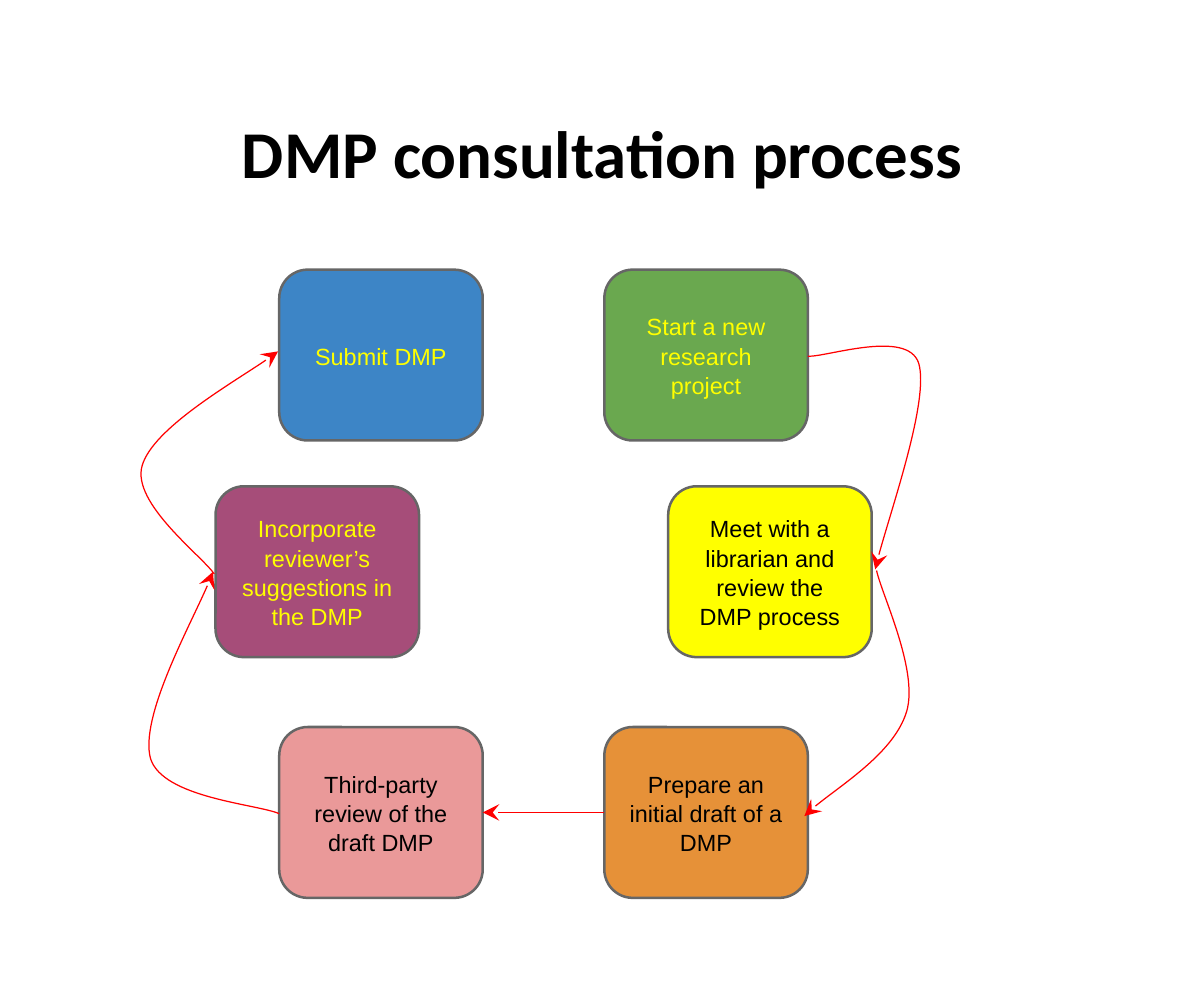
from lxml.etree import SubElement
from pptx import Presentation
from pptx.dml.color import RGBColor
from pptx.enum.shapes import MSO_CONNECTOR, MSO_SHAPE
from pptx.enum.text import MSO_ANCHOR, PP_ALIGN
from pptx.oxml.ns import qn
from pptx.util import Pt

COLORS = {
    "black": "000000", "yellow": "FFFF00", "green": "6AA84F", "orange": "E69138",
    "pink": "EA9999", "purple": "A64D79", "blue": "3D85C6", "gray": "666666", "red": "FF0000",
}
BOX_WIDTH, BOX_HEIGHT = 121.7, 102.2
TOP_ROW, MIDDLE_ROW, BOTTOM_ROW = 161.3, 290.9, 434.9
OUTER_LEFT, INNER_LEFT, INNER_RIGHT, OUTER_RIGHT = 128.9, 167, 361.4, 399.6

STEPS = {
    "start": ("Start a new research project", INNER_RIGHT, TOP_ROW, "green", "yellow"),
    "meet": ("Meet with a librarian and review the DMP process", OUTER_RIGHT, MIDDLE_ROW, "yellow", "black"),
    "draft": ("Prepare an initial draft of a DMP", INNER_RIGHT, BOTTOM_ROW, "orange", "black"),
    "review": ("Third-party review of the draft DMP", INNER_LEFT, BOTTOM_ROW, "pink", "black"),
    "revise": ("Incorporate reviewer’s suggestions in the DMP", OUTER_LEFT, MIDDLE_ROW, "purple", "yellow"),
    "submit": ("Submit DMP", INNER_LEFT, TOP_ROW, "blue", "yellow"),
}
START_TO_MEET = [(483.1, 213.1), (493.9, 213.8), (542.9, 196.6), (549.4, 217.4),
                 (555.8, 239), (527.8, 319.7), (523.4, 340.6)]
MEET_TO_DRAFT = [(524.2, 341.3), (527, 355), (549.4, 401), (542.2, 425.5),
                 (535, 450), (491, 477.4), (481, 488.2)]
REVIEW_TO_REVISE = [(167, 486.7), (154.1, 481), (97.2, 477.4), (90, 453.6),
                    (83.5, 429.1), (121, 360.7), (127.4, 342)]
REVISE_TO_SUBMIT = [(128.2, 343.4), (121, 332.6), (78.5, 301), (85, 278.6),
                    (91.4, 256.3), (152.6, 221), (166.3, 210.2)]


def rgb(name):
    """Return the named colour."""
    return RGBColor.from_string(COLORS[name])


def write_text(shape, text, font="Arial", size=14, color="black", bold=False,
               anchor=MSO_ANCHOR.MIDDLE, spacing=1.05):
    """Write one centred, wrapped paragraph into a shape."""
    frame = shape.text_frame
    frame.word_wrap = True
    frame.vertical_anchor = anchor
    frame.margin_left = frame.margin_right = Pt(7.2)
    frame.margin_top = frame.margin_bottom = Pt(7.2)
    paragraph = frame.paragraphs[0]
    paragraph.alignment = PP_ALIGN.CENTER
    paragraph.line_spacing = spacing
    run = paragraph.add_run()
    run.text = text
    run.font.name, run.font.size, run.font.bold = font, Pt(size), bold
    run.font.color.rgb = rgb(color)


def add_title(slide, text):
    """Add the slide heading."""
    shape = slide.shapes.add_textbox(Pt(36), Pt(23.8), Pt(648), Pt(97.9))
    write_text(shape, text, font="Calibri", size=40, bold=True,
               anchor=MSO_ANCHOR.BOTTOM, spacing=1.0)


def add_step(slide, text, left, top, fill, color):
    """Add one rounded process step."""
    shape = slide.shapes.add_shape(MSO_SHAPE.ROUNDED_RECTANGLE, Pt(left), Pt(top),
                                   Pt(BOX_WIDTH), Pt(BOX_HEIGHT))
    shape.shadow.inherit = False
    shape.fill.solid()
    shape.fill.fore_color.rgb = rgb(fill)
    shape.line.color.rgb = rgb("gray")
    shape.line.width = Pt(1.5)
    write_text(shape, text, color=color)
    return shape


def style_arrow(shape):
    """Give a connector or curve a thin red line with a stealth head."""
    shape.line.color.rgb = rgb("red")
    shape.line.width = Pt(0.75)
    properties = shape._element.spPr
    SubElement(properties.find(qn("a:ln")), qn("a:tailEnd"), type="stealth", w="lg", len="lg")
    if properties.find(qn("a:effectLst")) is None:
        SubElement(properties, qn("a:effectLst"))


def add_straight_arrow(slide, source, target):
    """Join the left side of one step to the right side of another."""
    connector = slide.shapes.add_connector(MSO_CONNECTOR.STRAIGHT, 0, 0, 0, 0)
    connector.begin_connect(source, 1)
    connector.end_connect(target, 3)
    style_arrow(connector)


def add_curved_arrow(slide, points):
    """Draw a chain of Bezier curves: anchors at every third point, handles between."""
    points = [(Pt(x), Pt(y)) for x, y in points]
    builder = slide.shapes.build_freeform(*points[0], scale=1.0)
    builder.add_line_segments(points[3::3], close=False)
    shape = builder.convert_to_shape()
    outline = next(shape._element.iter(qn("a:path")))
    for segment in outline.findall(qn("a:lnTo")):
        outline.remove(segment)
    for index in range(1, len(points), 3):
        curve = SubElement(outline, qn("a:cubicBezTo"))
        for x, y in points[index:index + 3]:
            SubElement(curve, qn("a:pt"), x=str(x - shape.left), y=str(y - shape.top))
    shape.fill.background()
    shape.shadow.inherit = False
    style_arrow(shape)


def main():
    """Build and save the consultation process slide."""
    presentation = Presentation()
    presentation.slide_width, presentation.slide_height = Pt(720), Pt(586.8)
    slide = presentation.slides.add_slide(presentation.slide_layouts[6])
    add_title(slide, "DMP consultation process")
    steps = {name: add_step(slide, *step) for name, step in STEPS.items()}
    add_straight_arrow(slide, steps["draft"], steps["review"])
    for points in (START_TO_MEET, MEET_TO_DRAFT, REVIEW_TO_REVISE, REVISE_TO_SUBMIT):
        add_curved_arrow(slide, points)
    presentation.save("out.pptx")


if __name__ == "__main__":
    main()
